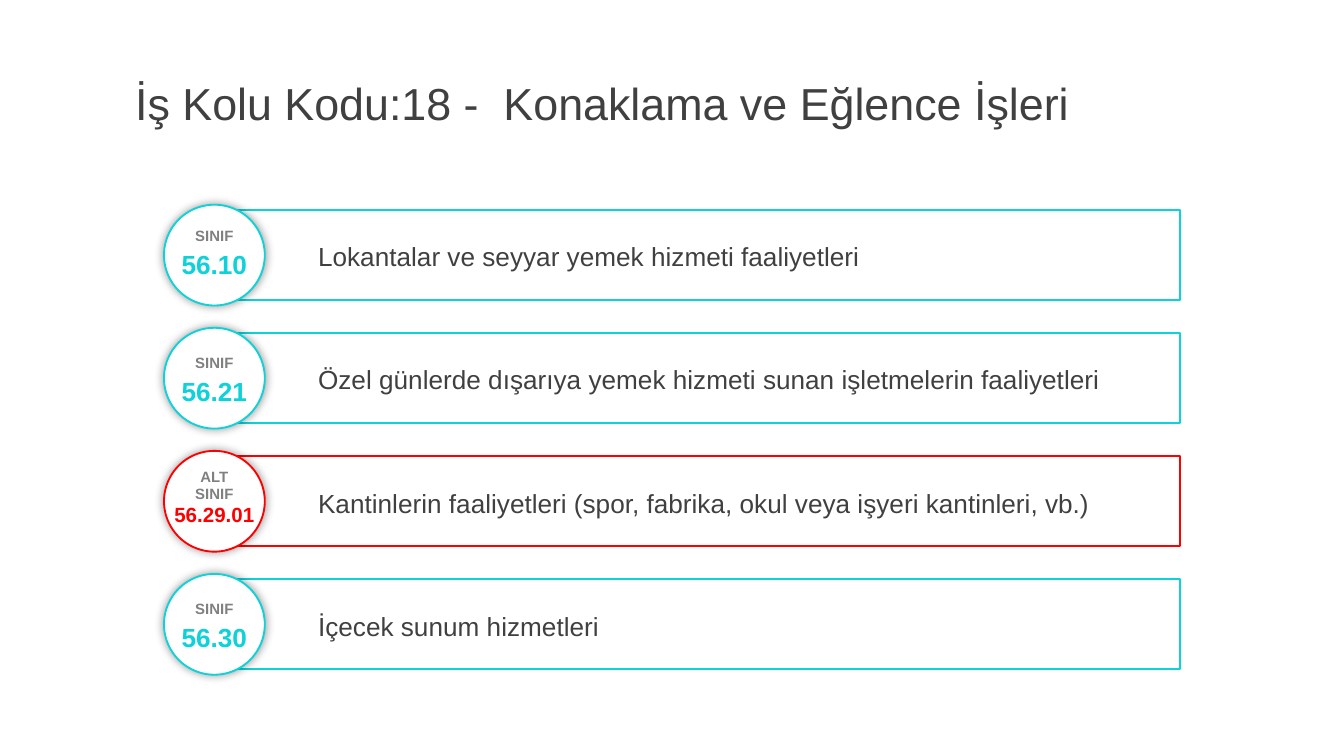
from lxml.etree import SubElement
from pptx import Presentation
from pptx.dml.color import RGBColor
from pptx.enum.shapes import MSO_SHAPE
from pptx.enum.text import MSO_ANCHOR, PP_ALIGN
from pptx.oxml.ns import qn
from pptx.util import Inches, Pt

CYAN, RED, DARK, GREY = "0DD2D9", "FF0000", "404040", "808080"

# Widescreen 16:9 slide
prs = Presentation()
prs.slide_width = Inches(10)
prs.slide_height = prs.slide_width * 9 // 16
s = prs.slides.add_slide(prs.slide_layouts[5])


def box(x, y, w, h):
    """Turn percentages of the slide's width and height into lengths."""
    col, row = prs.slide_width / 100, prs.slide_height / 100
    return int(x * col), int(y * row), int(w * col), int(h * row)


def write(sp, text, size, color, bold=False, align=PP_ALIGN.LEFT):
    tf = sp.text_frame
    tf.text = text
    tf.word_wrap = True
    tf.vertical_anchor = MSO_ANCHOR.MIDDLE
    for p in tf.paragraphs:
        p.alignment = align
        for r in p.runs:
            for name, value in {"name": "Arial", "size": Pt(size), "bold": bold}.items():
                setattr(r.font, name, value)
            r.font.color.rgb = RGBColor.from_string(color)


# Title
title = s.shapes.title
title.left, title.top, title.width, title.height = box(9.06, 8, 90.9, 11.2)
write(title, "İş Kolu Kodu:18 -  Konaklama ve Eğlence İşleri", 24, DARK)

# Rows: description, label, label offset and height,
# code, code size, code offset below the label and height, colour
rows = [
    ("Lokantalar ve seyyar yemek hizmeti faaliyetleri",
     "SINIF", 1.18, 4.27, "56.10", 14, 2.88, 6.04, CYAN),
    ("Özel günlerde dışarıya yemek hizmeti sunan işletmelerin faaliyetleri",
     "SINIF", 1.78, 4.27, "56.21", 14, 2.84, 6.04, CYAN),
    ("Kantinlerin faaliyetleri (spor, fabrika, okul veya işyeri kantinleri, vb.)",
     "ALT\nSINIF", 0.53, 6.58, "56.29.01", 11, 4.55, 5.16, RED),
    ("İçecek sunum hizmetleri",
     "SINIF", 1.72, 4.27, "56.30", 14, 2.88, 6.04, CYAN),
]
FIRST_ROW, PITCH = 27.79, 16.28

for i, (text, label, label_dy, label_h, code, code_size, code_dy, code_h, color) in enumerate(rows):
    top = FIRST_ROW + i * PITCH
    label_top = top + label_dy

    # Bar and badge
    bar = s.shapes.add_shape(MSO_SHAPE.RECTANGLE, *box(15.9, top, 71.9, 11.91))
    bar.fill.background()
    badge = s.shapes.add_shape(MSO_SHAPE.OVAL, *box(12.2, top - 0.71, 7.5, 13.33))
    badge.fill.solid()
    badge.fill.fore_color.rgb = RGBColor.from_string("FFFFFF")
    for sp in (bar, badge):
        sp.shadow.inherit = False
        sp.line.color.rgb = RGBColor.from_string(color)
        sp.line.width = Pt(1)

    # Soft shadow around the badge
    effects = badge._element.spPr.find(qn("a:effectLst"))
    shadow = SubElement(effects, qn("a:outerShdw"), blurRad=str(Pt(5)), dist="0",
                        dir="0", algn="ctr", rotWithShape="0")
    black = SubElement(shadow, qn("a:srgbClr"), val="000000")
    SubElement(black, qn("a:alpha"), val="40000")

    # Description, label and code
    write(s.shapes.add_textbox(*box(22.68, top + 3.11, 62.8, 6.04)), text, 14, DARK)
    write(s.shapes.add_textbox(*box(11.4, label_top, 9.1, label_h)),
          label, 8, GREY, True, PP_ALIGN.CENTER)
    write(s.shapes.add_textbox(*box(11.4, label_top + code_dy, 9.1, code_h)),
          code, code_size, color, True, PP_ALIGN.CENTER)

prs.save("out.pptx")
